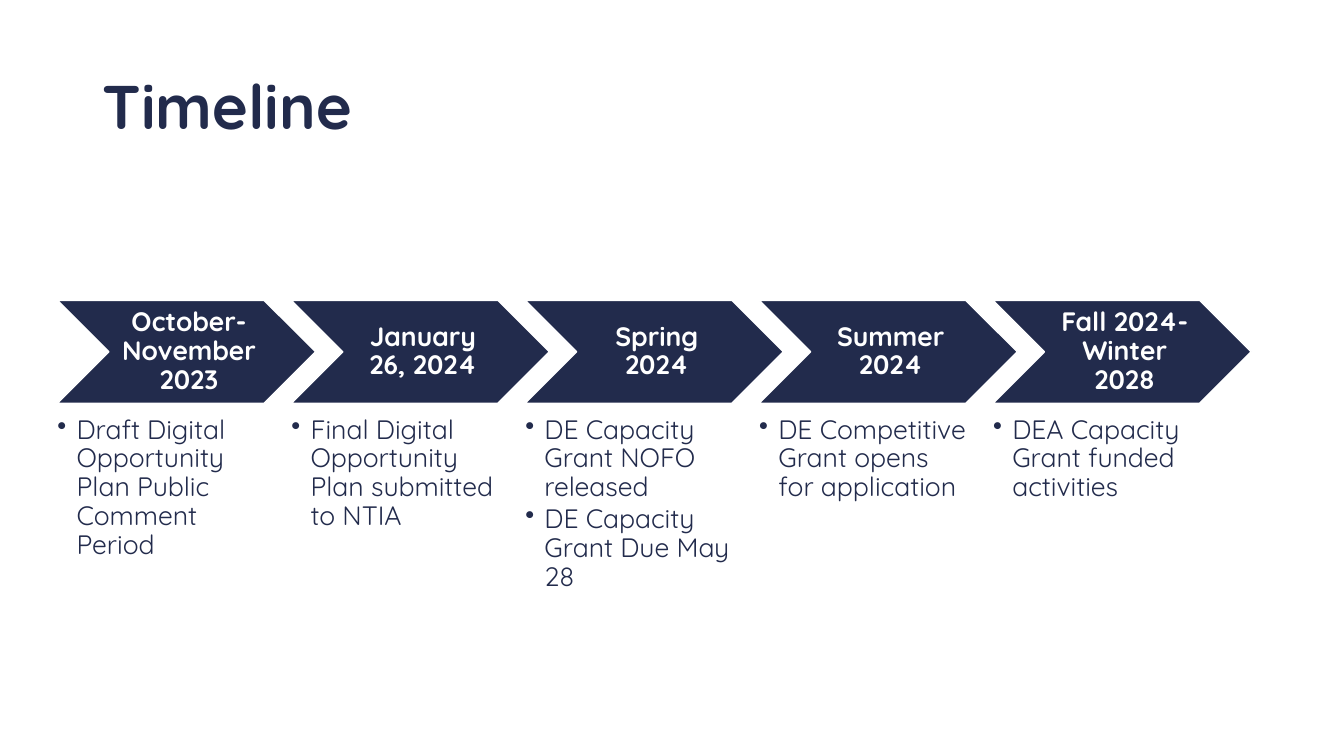
from dataclasses import dataclass

from lxml import etree
from pptx import Presentation
from pptx.dml.color import RGBColor
from pptx.enum.shapes import MSO_SHAPE
from pptx.enum.text import MSO_ANCHOR, PP_ALIGN
from pptx.oxml.ns import qn
from pptx.slide import Slide
from pptx.text.text import TextFrame, _Paragraph as Paragraph
from pptx.util import Emu, Pt

PX = 9144  # 100 px to the inch
FONT = "Quicksand"
COLORS = {"navy": "222B4C", "white": "FFFFFF"}

LEFT, PITCH = 57, 232
CHEVRON_TOP, CHEVRON_W, CHEVRON_H = 298, 256, 102
NOTES_TOP, NOTES_W, NOTES_H = 413, 205, 184
BULLET_INDENT = 19


@dataclass(frozen=True)
class Step:
    date: str
    notes: tuple[str, ...]


STEPS = (
    Step("October-November 2023",
         ("Draft Digital Opportunity Plan Public Comment Period",)),
    Step("January 26, 2024",
         ("Final Digital Opportunity Plan submitted to NTIA",)),
    Step("Spring 2024",
         ("DE Capacity Grant NOFO released", "DE Capacity Grant Due May 28")),
    Step("Summer 2024", ("DE Competitive Grant opens for application",)),
    Step("Fall 2024-Winter 2028", ("DEA Capacity Grant funded activities",)),
)


def px(n: int) -> Emu:
    return Emu(n * PX)


def rgb(name: str) -> RGBColor:
    return RGBColor.from_string(COLORS[name])


def set_insets(tf: TextFrame, left: int, top: int, right: int, bottom: int) -> None:
    tf.margin_left, tf.margin_top = px(left), px(top)
    tf.margin_right, tf.margin_bottom = px(right), px(bottom)


def add_text(p: Paragraph, text: str, size: int, color: str, bold: bool = False) -> None:
    p.line_spacing = 0.9
    r = p.add_run()
    r.text = text
    r.font.name = FONT
    r.font.size = Pt(size)
    r.font.bold = bold
    r.font.color.rgb = rgb(color)


def add_bullet(p: Paragraph) -> None:
    pPr = p._p.get_or_add_pPr()
    pPr.set("marL", str(px(BULLET_INDENT)))
    pPr.set("indent", str(-px(BULLET_INDENT)))
    etree.SubElement(pPr, qn("a:buChar")).set("char", "•")


def add_title(slide: Slide, text: str) -> None:
    tf = slide.shapes.add_textbox(px(92), px(62), px(1150), px(85)).text_frame
    tf.word_wrap = True
    tf.vertical_anchor = MSO_ANCHOR.BOTTOM
    add_text(tf.paragraphs[0], text, 44, "navy", bold=True)


def add_chevron(slide: Slide, left: int, date: str) -> None:
    sp = slide.shapes.add_shape(MSO_SHAPE.CHEVRON, px(left), px(CHEVRON_TOP),
                                px(CHEVRON_W), px(CHEVRON_H))
    sp.shadow.inherit = False
    sp.fill.solid()
    sp.fill.fore_color.rgb = rgb("navy")
    sp.line.color.rgb = rgb("white")
    sp.line.width = Pt(1)
    tf = sp.text_frame
    tf.word_wrap = True
    tf.vertical_anchor = MSO_ANCHOR.MIDDLE
    set_insets(tf, 8, 3, 3, 3)
    p = tf.paragraphs[0]
    p.alignment = PP_ALIGN.CENTER
    add_text(p, date, 19, "white", bold=True)


def add_notes(slide: Slide, left: int, notes: tuple[str, ...]) -> None:
    """Place the bulleted list that sits under a chevron."""
    tf = slide.shapes.add_textbox(px(left), px(NOTES_TOP),
                                  px(NOTES_W), px(NOTES_H)).text_frame
    tf.word_wrap = True
    set_insets(tf, 0, 0, 0, 0)
    for i, note in enumerate(notes):
        p = tf.add_paragraph() if i else tf.paragraphs[0]
        add_bullet(p)
        p.space_after = Pt(2.3)
        add_text(p, note, 19, "navy")


def main() -> None:
    prs = Presentation()
    prs.slide_width, prs.slide_height = px(1333), px(750)
    slide = prs.slides.add_slide(prs.slide_layouts[6])
    add_title(slide, "Timeline")
    for i, step in enumerate(STEPS):
        left = LEFT + i * PITCH
        add_chevron(slide, left, step.date)
        add_notes(slide, left, step.notes)
    prs.save("out.pptx")


if __name__ == "__main__":
    main()
